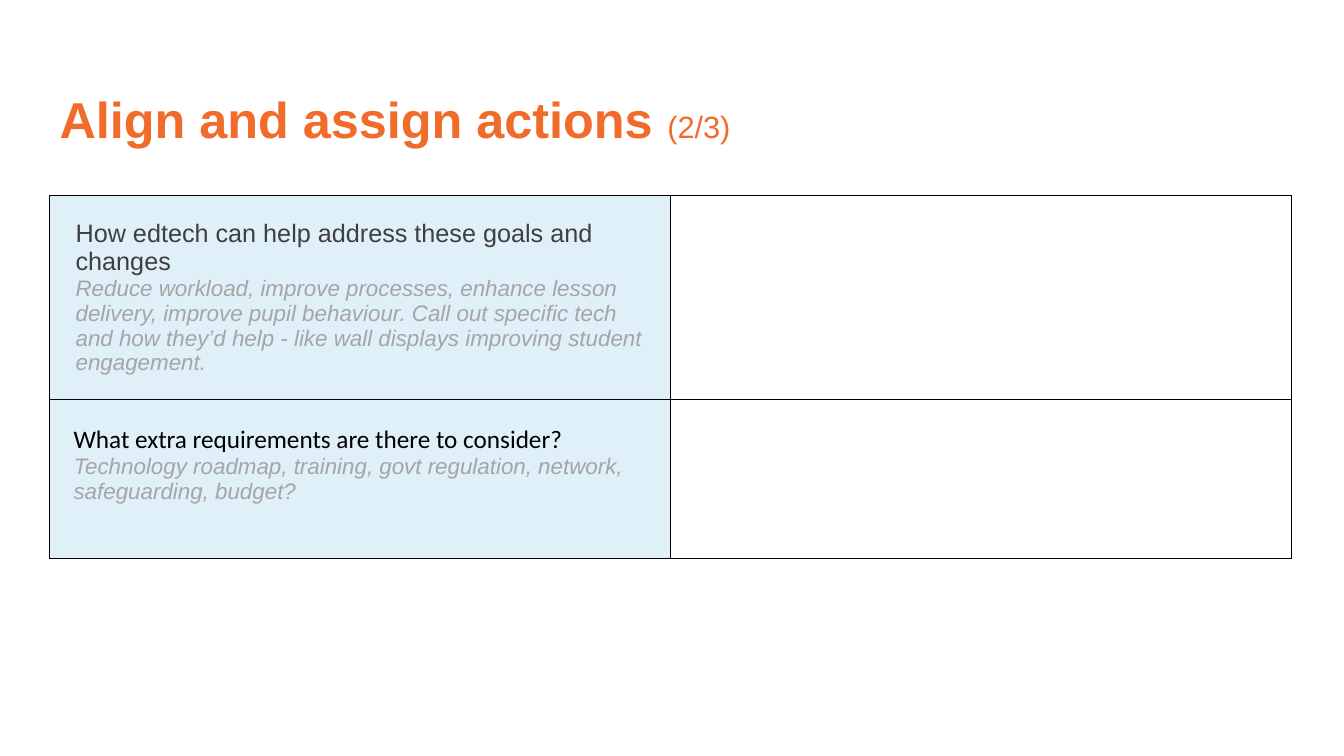
from dataclasses import dataclass

from lxml.etree import SubElement
from pptx import Presentation
from pptx.dml.color import RGBColor as RGB
from pptx.enum.text import MSO_ANCHOR as Anchor, MSO_AUTO_SIZE as AutoSize, PP_ALIGN as Align
from pptx.oxml.ns import qn
from pptx.util import Inches, Pt

# Content
TITLE = ("Align and assign actions ", "(2/3)")
QUESTIONS = [
    {
        "heading": "How edtech can help address these goals and changes",
        "hint": "Reduce workload, improve processes, enhance lesson delivery, "
                "improve pupil behaviour. Call out specific tech and how they’d help "
                "- like wall displays improving student engagement.",
        "heading_font": "Arial", "heading_color": "3F3F3F", "indent": 0.02,
    },
    {
        "heading": "What extra requirements are there to consider?",
        "hint": "Technology roadmap, training, govt regulation, network, "
                "safeguarding, budget?",
        "heading_font": "Calibri", "heading_color": "000000", "indent": 0,
    },
]


@dataclass(frozen=True)
class Theme:
    font: str = "Arial"
    accent: str = "F16B2B"
    hint: str = "A5A5A5"
    question_fill: str = "E0F0F9"
    answer_fill: str = "FFFFFF"
    border: str = "000000"
    border_width: float = 0.75
    title_size: int = 36
    counter_size: int = 22
    heading_size: int = 18
    hint_size: int = 16


THEME = Theme()
LEFT, TABLE_TOP = 0.49, 1.94
COLUMN_WIDTH, ROW_HEIGHT, CELL_MARGIN = 6.16, 1.57, 0.24


def add_span(para, text, size, color, font=THEME.font, bold=False, italic=False):
    span = para.add_run()
    span.text = text
    span.font.name, span.font.size = font, Pt(size)
    span.font.bold, span.font.italic = bold, italic
    span.font.color.rgb = RGB.from_string(color)


def format_cell(cell, fill):
    cell.margin_left = cell.margin_right = Inches(CELL_MARGIN)
    cell.margin_top = cell.margin_bottom = Inches(CELL_MARGIN)
    properties = cell._tc.get_or_add_tcPr()
    for side in ("a:lnL", "a:lnR", "a:lnT", "a:lnB"):
        line = SubElement(properties, qn(side), w=str(Pt(THEME.border_width)))
        SubElement(SubElement(line, qn("a:solidFill")), qn("a:srgbClr"), val=THEME.border)
    cell.fill.solid()
    cell.fill.fore_color.rgb = RGB.from_string(fill)


def add_title(page):
    title = page.shapes.title
    title.left, title.top = Inches(LEFT), Inches(0.49)
    title.width, title.height = Inches(11.5), Inches(1.45)
    frame = title.text_frame
    frame.auto_size, frame.word_wrap = AutoSize.NONE, True
    frame.vertical_anchor = Anchor.MIDDLE
    para = frame.paragraphs[0]
    para.alignment, para.line_spacing = Align.LEFT, 0.9
    heading, counter = TITLE
    add_span(para, heading, THEME.title_size, THEME.accent, bold=True)
    add_span(para, counter, THEME.counter_size, THEME.accent)


def add_questions(page):
    count = len(QUESTIONS)
    table = page.shapes.add_table(
        count, 2, Inches(LEFT), Inches(TABLE_TOP),
        Inches(2 * COLUMN_WIDTH), Inches(count * ROW_HEIGHT)).table
    table.first_row = table.horz_banding = False
    for column in table.columns:
        column.width = Inches(COLUMN_WIDTH)
    for row, question in enumerate(QUESTIONS):
        table.rows[row].height = Inches(ROW_HEIGHT)
        question_cell, answer_cell = table.cell(row, 0), table.cell(row, 1)
        format_cell(question_cell, THEME.question_fill)
        format_cell(answer_cell, THEME.answer_fill)

        # Heading above its grey hint
        frame = question_cell.text_frame
        heading, hint = frame.paragraphs[0], frame.add_paragraph()
        for para in (heading, hint):
            para._p.get_or_add_pPr().set("marL", str(Inches(question["indent"])))
        add_span(heading, question["heading"], THEME.heading_size,
                 question["heading_color"], font=question["heading_font"])
        add_span(hint, question["hint"], THEME.hint_size, THEME.hint, italic=True)


def main():
    deck = Presentation()
    deck.slide_width, deck.slide_height = Inches(13.33), Inches(7.5)
    page = deck.slides.add_slide(deck.slide_layouts[5])
    add_title(page)
    add_questions(page)
    deck.save("out.pptx")


if __name__ == "__main__":
    main()
